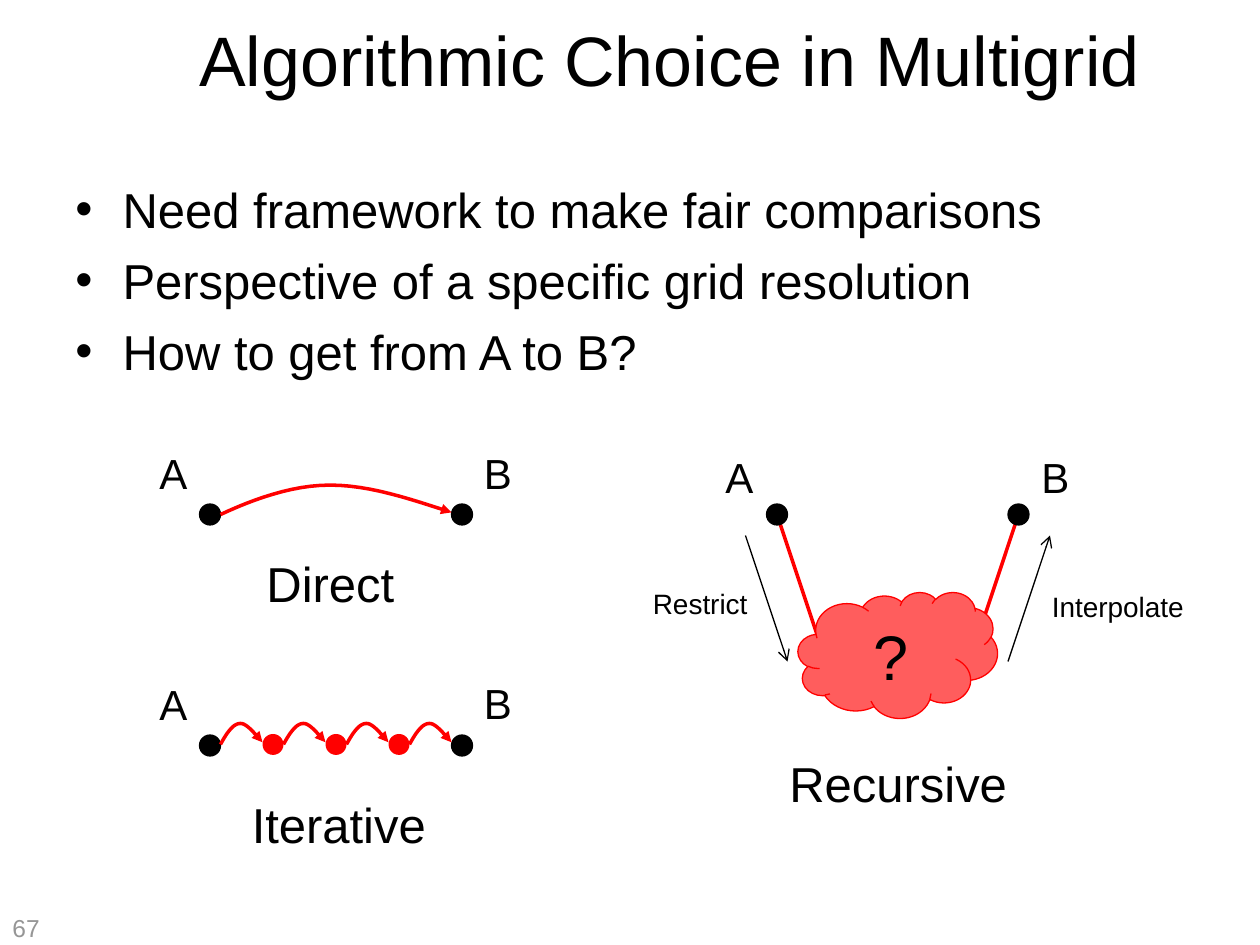
"""Build the slide on algorithmic choice in multigrid on a 120 by 90 grid."""
import pptx
import pptx.util
import pptx.dml.color
import pptx.enum.shapes
import pptx.enum.text
import pptx.oxml
import pptx.oxml.ns
from lxml import etree

COLORS = {"black": "000000", "red": "FF0000", "cloud": "FF5D5D", "grey": "969696"}
rgb = {name: pptx.dml.color.RGBColor.from_string(c) for name, c in COLORS.items()}
align = pptx.enum.text.PP_ALIGN
shapes = pptx.enum.shapes.MSO_SHAPE
qn = pptx.oxml.ns.qn

prs = pptx.Presentation()
prs.slide_width = pptx.util.Inches(10)
prs.slide_height = pptx.util.Inches(7.5)
s = prs.slides.add_slide(prs.slide_layouts[6])
unit = prs.slide_width // 120


def write(p, text, size, color="black"):
    r = p.add_run()
    r.text = text
    r.font.name = "Arial"
    r.font.size = pptx.util.Pt(size)
    r.font.color.rgb = rgb[color]


def stroke(sp, color, width, end):
    sp.line.color.rgb = rgb[color]
    sp.line.width = pptx.util.Pt(width)
    ln = sp.line._get_or_add_ln()
    etree.SubElement(ln, qn("a:tailEnd"), type=end)
    if sp._element.spPr.find(qn("a:effectLst")) is None:
        etree.SubElement(sp._element.spPr, qn("a:effectLst"))


title = s.shapes.add_textbox(*[int(v * unit) for v in (15.5, 0, 96.5, 11.2)])
tf = title.text_frame
tf.word_wrap = True
tf.vertical_anchor = pptx.enum.text.MSO_ANCHOR.MIDDLE
tf.paragraphs[0].alignment = align.CENTER
write(tf.paragraphs[0], "Algorithmic Choice in Multigrid", 40)

body = s.shapes.add_textbox(*[int(v * unit) for v in (6, 16.5, 108, 19)])
tf = body.text_frame
tf.word_wrap = True
points = [
    "Need framework to make fair comparisons",
    "Perspective of a specific grid resolution",
    "How to get from A to B?",
]
for i, text in enumerate(points):
    p = tf.add_paragraph() if i else tf.paragraphs[0]
    pPr = p._p.get_or_add_pPr()
    pPr.set("marL", str(int(4.5 * unit)))
    pPr.set("indent", str(int(-4.5 * unit)))
    etree.SubElement(pPr, qn("a:buFont"), typeface="Arial")
    etree.SubElement(pPr, qn("a:buChar"), char="•")
    if i:
        p.space_before = pptx.util.Pt(7)
    write(p, text, 28)

labels = [
    ("67", 0, 86.4, 5.6, 14, "grey"),
    ("A", 14, 42, 5.2, 24, "black"),
    ("B", 44.9, 42, 5.2, 24, "black"),
    ("A", 14, 64, 5.2, 24, "black"),
    ("B", 44.9, 63.9, 5.2, 24, "black"),
    ("A", 67.9, 42.4, 5.2, 24, "black"),
    ("B", 98, 42.4, 5.2, 24, "black"),
    ("Direct", 24.2, 52.1, 14.8, 28, "black"),
    ("Iterative", 22.8, 75.1, 19.2, 28, "black"),
    ("Recursive", 74, 71.2, 23.4, 28, "black"),
    ("Restrict", 61, 55.3, 11.5, 16, "black"),
    ("Interpolate", 99, 55.6, 15.1, 16, "black"),
]
for text, x, y, width, size, color in labels:
    box = s.shapes.add_textbox(*[int(v * unit) for v in (x, y, width, size / 4)])
    box.text_frame.word_wrap = False
    write(box.text_frame.paragraphs[0], text, size, color)

lines = [
    (78, 61, 74, 49, "red", 2, "oval"),
    (93, 61, 97, 49, "red", 2, "oval"),
    (71, 51, 75, 63, "black", 0.75, "arrow"),
    (96, 63, 100, 51, "black", 0.75, "arrow"),
]
for x1, y1, x2, y2, color, width, end in lines:
    ends = [v * unit for v in (x1, y1, x2, y2)]
    line = s.shapes.add_connector(pptx.enum.shapes.MSO_CONNECTOR.STRAIGHT, *ends)
    stroke(line, color, width, end)

cloud = s.shapes.add_shape(shapes.CLOUD, *[int(v * unit) for v in (76, 56.4, 19, 12)])
cloud.shadow.inherit = False
cloud.fill.solid()
cloud.fill.fore_color.rgb = rgb["cloud"]
cloud.line.color.rgb = rgb["red"]
cloud.line.width = pptx.util.Pt(0.75)
cloud.text_frame.vertical_anchor = pptx.enum.text.MSO_ANCHOR.TOP
cloud.text_frame.paragraphs[0].alignment = align.CENTER
write(cloud.text_frame.paragraphs[0], "?", 36)

dots = [(x, 48, "black") for x in (19, 43, 73, 96)]
dots += [(x, 70, "black") for x in (19, 43)]
dots += [(x, 69.9, "red") for x in (25, 31, 37)]
for x, y, color in dots:
    dot = s.shapes.add_shape(shapes.OVAL, *[int(v * unit) for v in (x, y, 2, 2)])
    dot.shadow.inherit = False
    dot.fill.solid()
    dot.fill.fore_color.rgb = rgb[color]
    if color == "red":
        dot.line.fill.background()
    else:
        dot.line.color.rgb = rgb[color]
        dot.line.width = pptx.util.Pt(0.75)

leap = [(21, 49), (24, 47.6), (27.8, 46.2), (31.4, 46.2), (35.2, 46.2), (39, 47.5), (43, 48.8)]
hop = [(0, 70.9), (0.6, 69.8), (1.2, 68.9), (1.9, 68.9), (2.5, 68.9), (3.2, 69.8), (4, 70.7)]
curves = [leap] + [[(x + start, y) for x, y in hop] for start in (21, 27, 33, 39)]
steps = 12
for curve in curves:
    trace = [curve[0]]
    for first in (0, 3):
        a, b, c, d = curve[first:first + 4]
        for t in [k / steps for k in range(1, steps + 1)]:
            weights = ((1 - t) ** 3, 3 * t * (1 - t) ** 2, 3 * t ** 2 * (1 - t), t ** 3)
            trace.append([sum(w * q[axis] for w, q in zip(weights, (a, b, c, d))) for axis in (0, 1)])
    trace = [(int(x * unit), int(y * unit)) for x, y in trace]
    builder = s.shapes.build_freeform(*trace[0])
    builder.add_line_segments(trace[1:], close=False)
    arc = builder.convert_to_shape()
    arc.shadow.inherit = False
    arc.fill.background()
    stroke(arc, "red", 2, "triangle")

prs.save("out.pptx")
